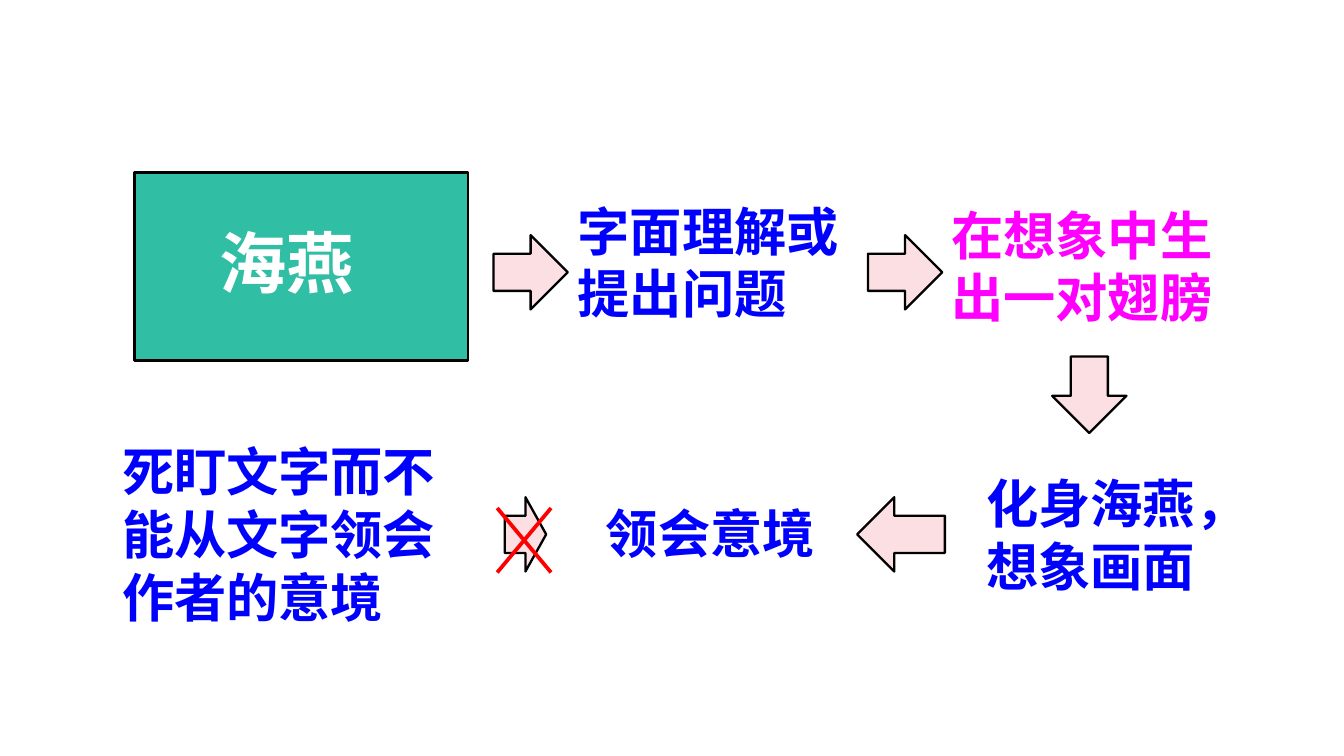
from dataclasses import dataclass
from lxml.etree import SubElement
from pptx import Presentation
from pptx.dml.color import RGBColor
from pptx.enum.shapes import MSO_CONNECTOR, MSO_SHAPE
from pptx.enum.text import MSO_AUTO_SIZE, PP_ALIGN
from pptx.oxml.ns import qn
from pptx.util import Pt


@dataclass(frozen=True)
class Theme:
    font: str = "Noto Sans CJK SC"
    body: int = 28
    title: int = 36
    blue: str = "0000FF"
    pink: str = "FF00FF"
    white: str = "FFFFFF"
    teal: str = "30BEA5"
    blush: str = "FBDFE3"
    black: str = "000000"
    red: str = "FF0000"
    edge: float = 1.25
    stroke: float = 2


class Board:
    def __init__(self, slide, theme):
        self.slide = slide
        self.theme = theme

    def shape(self, kind, box, fill):
        item = self.slide.shapes.add_shape(kind, *map(Pt, box))
        item.shadow.inherit = False
        item.fill.solid()
        item.fill.fore_color.rgb = RGBColor.from_string(fill)
        item.line.color.rgb = RGBColor.from_string(self.theme.black)
        item.line.width = Pt(self.theme.edge)

    def arrow(self, kind, box):
        self.shape(kind, box, self.theme.blush)

    def text(self, words, box, color, size=None, align=PP_ALIGN.LEFT):
        frame = self.slide.shapes.add_textbox(*map(Pt, box)).text_frame
        frame.word_wrap = True
        frame.auto_size = MSO_AUTO_SIZE.SHAPE_TO_FIT_TEXT
        frame.text = words
        line = frame.paragraphs[0]
        line.alignment = align
        font = line.runs[0].font
        font.name = self.theme.font
        font.size = Pt(size or self.theme.body)
        font.bold = True
        font.color.rgb = RGBColor.from_string(color)
        east = SubElement(line.runs[0]._r.get_or_add_rPr(), qn("a:ea"))
        east.set("typeface", self.theme.font)

    def cross(self, left, top, wide, high):
        for start, end in ((left, left + wide), (left + wide, left)):
            line = self.slide.shapes.add_connector(
                MSO_CONNECTOR.STRAIGHT, Pt(start), Pt(top), Pt(end), Pt(top + high))
            line.line.color.rgb = RGBColor.from_string(self.theme.red)
            line.line.width = Pt(self.theme.stroke)
            SubElement(line._element.spPr, qn("a:effectLst"))


def main():
    deck = Presentation()
    deck.slide_width, deck.slide_height = Pt(720), Pt(405)
    theme = Theme()
    board = Board(deck.slides.add_slide(deck.slide_layouts[6]), theme)

    side, upper, lower = 39.8, 126, 266.4
    for kind, box in (
        (MSO_SHAPE.RIGHT_ARROW, (264.4, upper, side, side)),
        (MSO_SHAPE.RIGHT_ARROW, (465, upper, side, side)),
        (MSO_SHAPE.DOWN_ARROW, (563.7, 191, side, 41)),
        (MSO_SHAPE.LEFT_ARROW, (459.2, lower, 47, side)),
        (MSO_SHAPE.RIGHT_ARROW, (270.4, lower, 22.2, side)),
    ):
        board.arrow(kind, box)

    for words, box, color in (
        ("字面理解或提出问题", (302.4, 103, 164.2, 74.9), theme.blue),
        ("在想象中生出一对翅膀", (502.6, 105.1, 161.3, 74.9), theme.pink),
        ("化身海燕，想象画面", (521.3, 249.1, 152.6, 74.9), theme.blue),
        ("领会意境", (317.5, 265, 153.4, 41), theme.blue),
        ("死盯文字而不能从文字领会作者的意境", (58.3, 231.8, 207.4, 108.7), theme.blue),
    ):
        board.text(words, box, color)

    board.shape(MSO_SHAPE.RECTANGLE, (72, 92.4, 178.9, 100.8), theme.teal)
    board.text("海燕", (67, 115.2, 172.8, 51.1), theme.white, theme.title, PP_ALIGN.CENTER)
    board.cross(266.4, 272.2, 28.8, 34.5)
    deck.save("out.pptx")


if __name__ == "__main__":
    main()
